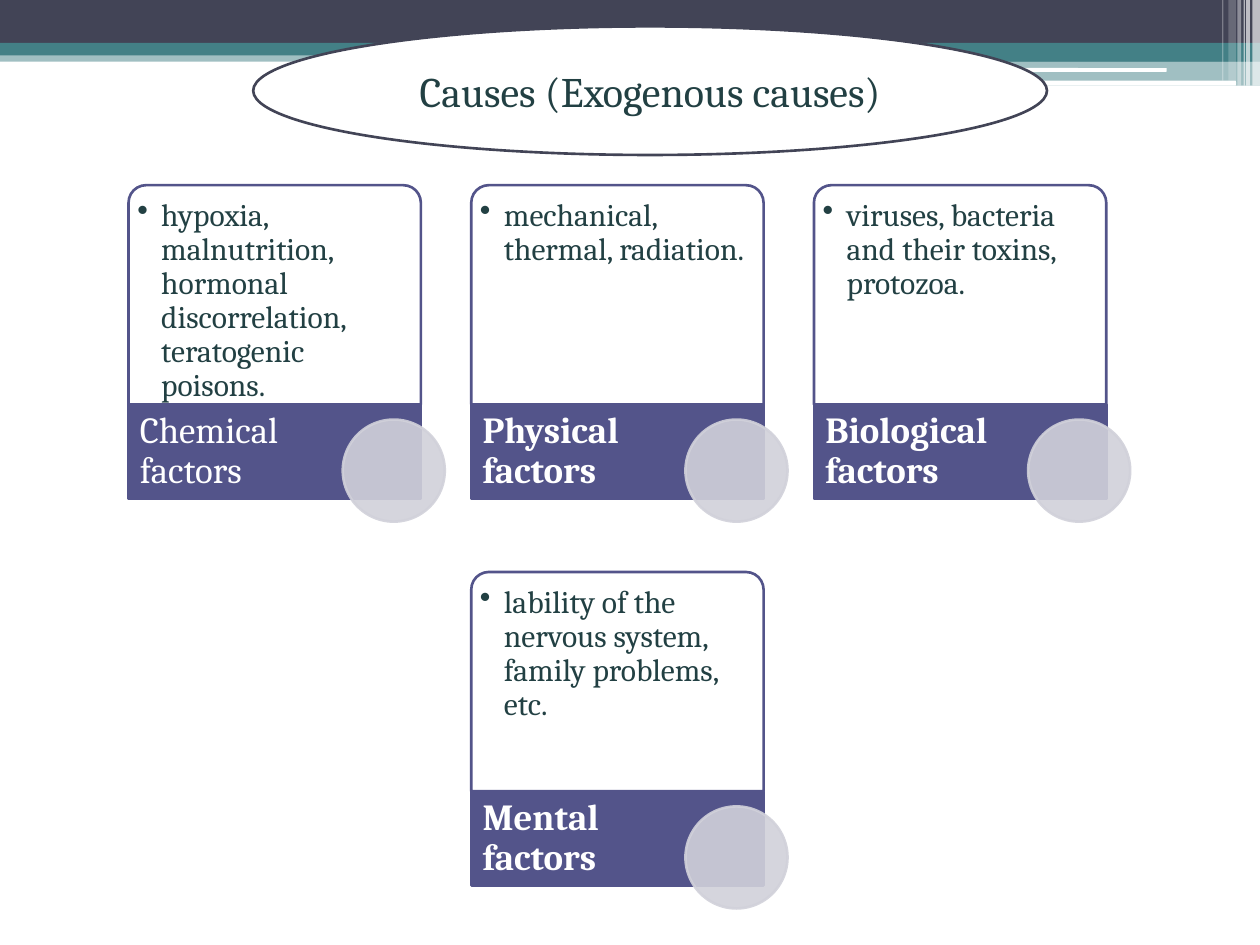
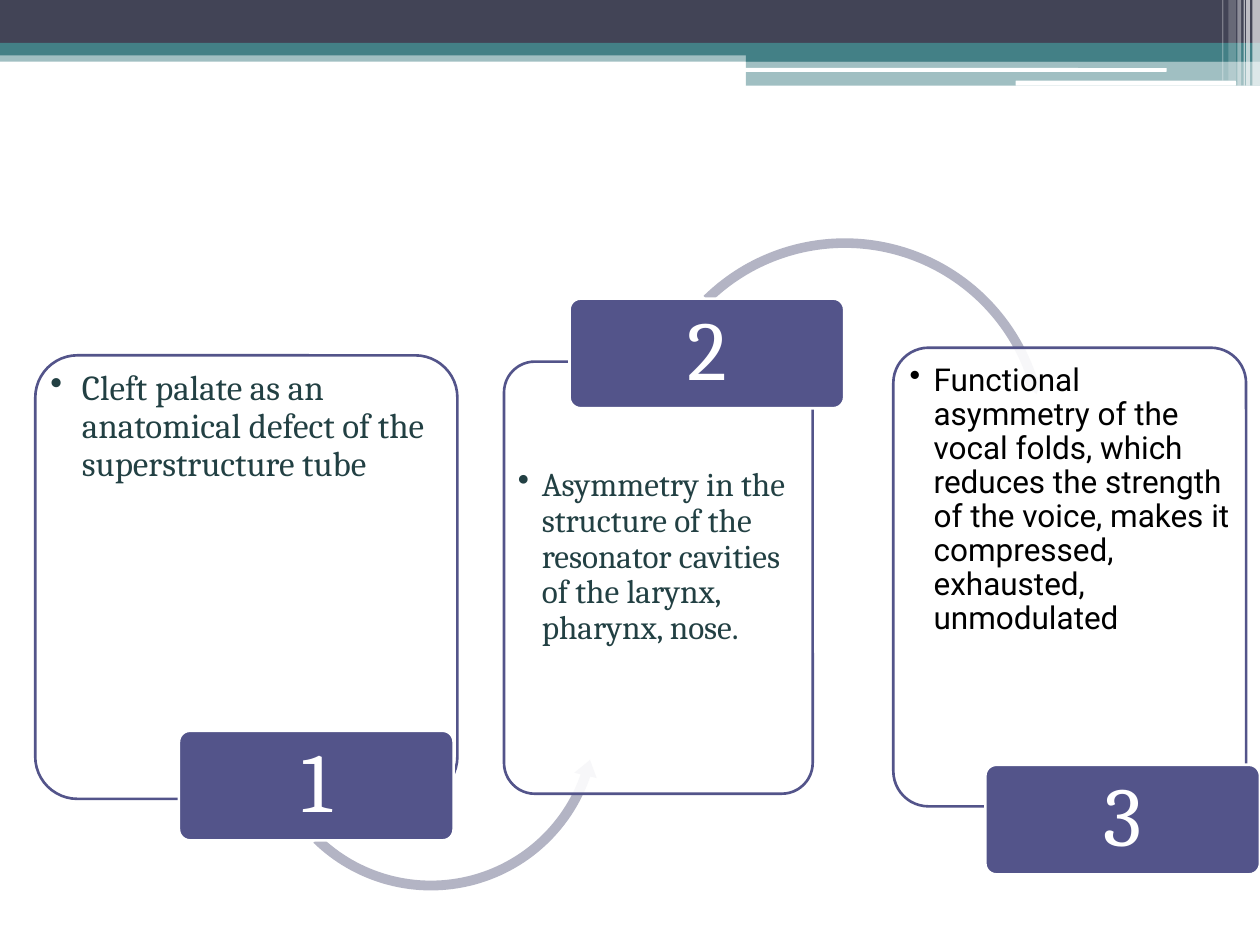
from lxml.etree import SubElement
from pptx import Presentation
from pptx.dml.color import RGBColor
from pptx.enum.shapes import MSO_SHAPE
from pptx.enum.text import MSO_ANCHOR, PP_ALIGN
from pptx.oxml.ns import qn
from pptx.util import Inches, Pt

WHITE = RGBColor(0xFF, 0xFF, 0xFF)
BLACK = RGBColor(0x00, 0x00, 0x00)
NAVY = RGBColor(0x42, 0x44, 0x56)
TEAL = RGBColor(0x43, 0x80, 0x86)
DARK_TEAL = RGBColor(0x22, 0x40, 0x43)
PURPLE = RGBColor(0x53, 0x54, 0x8A)
PALE_GREY = RGBColor(0xD1, 0xD1, 0xDA)
ARROW_GREY = RGBColor(0xB3, 0xB4, 0xC4)


def add_block(slide, kind, box, fill, line=None, opacity=100, adjustments=()):
    """Add a preset shape; the opacity applies wherever the fill colour is used."""
    shape = slide.shapes.add_shape(kind, *[Inches(length) for length in box])
    shape.shadow.inherit = False
    for index, value in enumerate(adjustments):
        shape.adjustments[index] = value
    shape.fill.solid()
    shape.fill.fore_color.rgb = fill
    if line is None:
        shape.line.fill.background()
    else:
        shape.line.color.rgb = line
        shape.line.width = Pt(1.5)
    if opacity < 100:
        for colour in shape.element.spPr.iter(qn("a:srgbClr")):
            if colour.get("val") == str(fill):
                SubElement(colour, qn("a:alpha"), val=str(opacity * 1000))
    return shape


def add_text(slide, text, box, size, color=DARK_TEAL, font="Cambria", bold=False,
             align=PP_ALIGN.LEFT, anchor=MSO_ANCHOR.TOP,
             insets=(0.04, 0.04, 0.04, 0.04), indent=0, spacing=0.9):
    """Add a text box; an indent turns the paragraph into a bullet."""
    shape = slide.shapes.add_textbox(*[Inches(length) for length in box])
    frame = shape.text_frame
    frame.word_wrap = True
    frame.vertical_anchor = anchor
    (frame.margin_left, frame.margin_top,
     frame.margin_right, frame.margin_bottom) = [Inches(inset) for inset in insets]
    paragraph = frame.paragraphs[0]
    if indent:
        properties = paragraph._p.get_or_add_pPr()
        properties.set("marL", str(Inches(indent)))
        properties.set("indent", str(-Inches(indent)))
        SubElement(properties, qn("a:buChar"), char="•")
    paragraph.alignment = align
    paragraph.line_spacing = spacing
    run = paragraph.add_run()
    run.text = text
    run.font.name = font
    run.font.size = Pt(size)
    run.font.bold = bold
    run.font.color.rgb = color


presentation = Presentation()
presentation.slide_width = Inches(10)
presentation.slide_height = Inches(7.5)
blank_layout = presentation.slide_layouts[6]
causes_slide = presentation.slides.add_slide(blank_layout)
defects_slide = presentation.slides.add_slide(blank_layout)

# Header bands and stripes shared by both slides
header_bands = [
    (MSO_SHAPE.RECTANGLE, (0, 0.4, 10, 0.09), TEAL, 50),
    (MSO_SHAPE.RECTANGLE, (0, 0, 10, 0.34), NAVY, 100),
    (MSO_SHAPE.RECTANGLE, (0, 0.34, 10, 0.1), TEAL, 100),
    (MSO_SHAPE.RECTANGLE, (5.92, 0.39, 4.08, 0.1), TEAL, 100),
    (MSO_SHAPE.RECTANGLE, (5.92, 0.48, 4.08, 0.2), TEAL, 50),
    (MSO_SHAPE.ROUNDED_RECTANGLE, (5.91, 0.54, 3.35, 0.03), WHITE, 100),
    (MSO_SHAPE.ROUNDED_RECTANGLE, (8.06, 0.64, 1.75, 0.04), WHITE, 100),
]
# Left, width, height and opacity
header_stripes = [
    (9.94, 0.06, 0.68, 65), (9.89, 0.03, 0.68, 65), (9.87, 0.01, 0.68, 60),
    (9.82, 0.03, 0.68, 40), (9.75, 0.06, 0.64, 20), (9.7, 0.01, 0.64, 30),
]
for slide in presentation.slides:
    for kind, box, color, opacity in header_bands:
        add_block(slide, kind, box, color, opacity=opacity)
    for left, width, height, opacity in header_stripes:
        add_block(slide, MSO_SHAPE.RECTANGLE, (left, 0, width, height), WHITE,
                  opacity=opacity)

# Slide 1: title in an ellipse
title_box = (2.01, 0.21, 6.3, 1.02)
add_block(causes_slide, MSO_SHAPE.OVAL, title_box, WHITE, line=NAVY)
add_text(causes_slide, "Causes (Exogenous causes)", title_box, 24,
         align=PP_ALIGN.CENTER, anchor=MSO_ANCHOR.MIDDLE,
         insets=(0.1, 0.05, 0.1, 0.05), spacing=1)

# Slide 1: factor cards on a grid of three columns
factors = [
    (0, 0, "Chemical factors", False,
     "hypoxia, malnutrition, hormonal discorrelation, teratogenic poisons."),
    (1, 0, "Physical factors", True, "mechanical, thermal, radiation."),
    (2, 0, "Biological factors", True,
     "viruses, bacteria and their toxins, protozoa."),
    (1, 1, "Mental factors", True,
     "lability of the nervous system, family problems, etc."),
]
for column, row, name, bold, examples in factors:
    left = 1.02 + 2.72 * column
    top = 1.47 + 3.07 * row
    label_top = top + 1.74
    add_block(causes_slide, MSO_SHAPE.ROUND_2_SAME_RECTANGLE, (left, top, 2.32, 1.74),
              WHITE, line=PURPLE, opacity=90, adjustments=(0.08, 0))
    add_text(causes_slide, examples, (left + 0.04, top + 0.04, 2.24, 1.69), 18,
             insets=(0.03, 0.07, 0.03, 0.03), indent=0.19)
    add_block(causes_slide, MSO_SHAPE.RECTANGLE, (left, label_top, 2.32, 0.75),
              PURPLE, line=PURPLE)
    add_text(causes_slide, name, (left, label_top, 1.64, 0.75), 21, color=WHITE,
             bold=bold, anchor=MSO_ANCHOR.MIDDLE, insets=(0.09, 0, 0.03, 0))
    add_block(causes_slide, MSO_SHAPE.OVAL, (left + 1.7, label_top + 0.12, 0.81, 0.81),
              PALE_GREY, line=PALE_GREY, opacity=90)

# Slide 2: numbered panels, each with the arrow that leads to the next one
panels = [
    {"panel": (0.28, 2.82, 3.35, 3.52), "text_box": (0.36, 2.9, 3.18, 2.61),
     "text": "Cleft palate as an anatomical defect of the superstructure tube",
     "format": {"size": 20, "indent": 0.25}, "badge": (1.42, 5.8),
     "arrow": (MSO_SHAPE.LEFT_CIRCULAR_ARROW, (2.03, 4.34, 2.78, 2.78),
               (0.028, 3.413, 11.453, 80.53, 0.033))},
    {"panel": (4, 2.87, 2.45, 3.43), "text_box": (4.07, 3.67, 2.31, 2.55),
     "text": "Asymmetry in the structure of the resonator cavities of the larynx, "
             "pharynx, nose.",
     "format": {"size": 19, "indent": 0.19}, "badge": (4.52, 2.37),
     "arrow": (MSO_SHAPE.CIRCULAR_ARROW, (5.05, 1.84, 3.31, 3.31),
               (0.023, 2.837, 205.034, 135.381, 0.027))},
    {"panel": (7.09, 2.76, 2.8, 3.64), "text_box": (7.18, 2.85, 2.64, 2.69),
     "text": "Functional asymmetry of the vocal folds, which reduces the strength of "
             "the voice, makes it compressed, exhausted, unmodulated",
     "format": {"size": 18, "indent": 0.19, "font": "Roboto", "color": BLACK},
     "badge": (7.82, 6.07), "arrow": None},
]
for number, item in enumerate(panels, start=1):
    add_block(defects_slide, MSO_SHAPE.ROUNDED_RECTANGLE, item["panel"], WHITE,
              line=PURPLE, opacity=90, adjustments=(0.1,))
    add_text(defects_slide, item["text"], item["text_box"], **item["format"])
    if item["arrow"]:
        kind, box, adjustments = item["arrow"]
        add_block(defects_slide, kind, box, ARROW_GREY, adjustments=adjustments)
    badge_box = (*item["badge"], 2.18, 0.87)
    add_block(defects_slide, MSO_SHAPE.ROUNDED_RECTANGLE, badge_box, PURPLE,
              line=WHITE, adjustments=(0.1,))
    add_text(defects_slide, str(number), badge_box, 48, color=WHITE,
             align=PP_ALIGN.CENTER, anchor=MSO_ANCHOR.MIDDLE,
             insets=(0.1, 0.07, 0.1, 0.07))

presentation.save("out.pptx")
